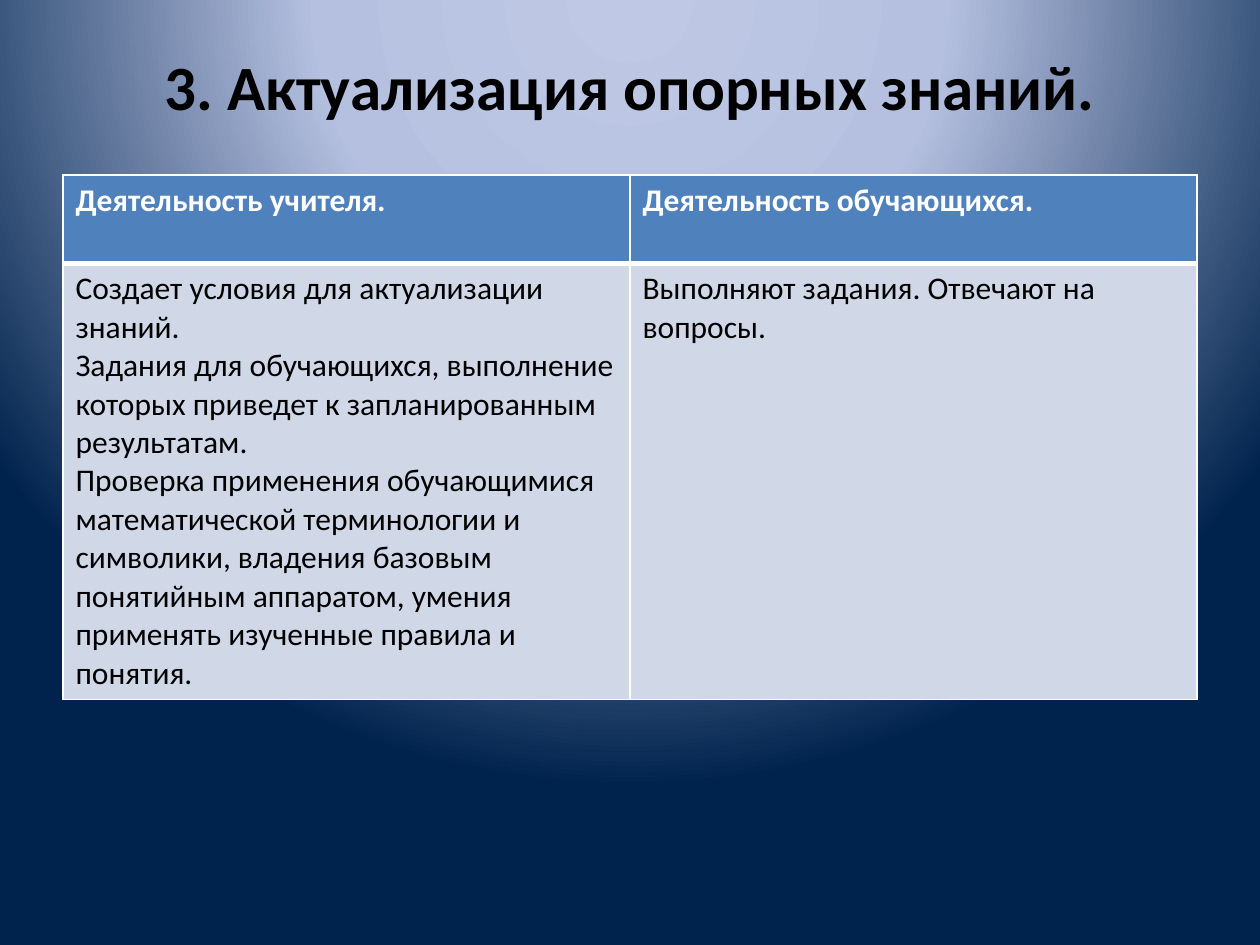
import pptx
import pptx.util
import pptx.oxml
import pptx.oxml.ns
import pptx.dml.color
import pptx.enum.text

TITLE = "3. Актуализация опорных знаний."
HEADER = ["Деятельность учителя.", "Деятельность обучающихся."]
BODY = [
    "\n".join([
        "Создает условия для актуализации знаний.",
        "Задания для обучающихся, выполнение которых приведет к "
        "запланированным результатам.",
        "Проверка применения обучающимися математической терминологии и "
        "символики, владения базовым понятийным аппаратом, умения применять "
        "изученные правила и понятия.",
    ]),
    "Выполняют задания. Отвечают на вопросы.",
]
# Texts, row height, fill, font colour, bold, bottom border width
ROWS = [
    (HEADER, 0.7, "4F81BD", "FFFFFF", True, 3),
    (BODY, 3.46, "D0D8E8", "000000", False, 1),
]
BACKGROUND = [(0, "BFC9E5"), (40, "B5C0E0"), (100, "00234D")]
WIDTH, HEIGHT, MARGIN = 10, 7.5, 0.5
TABLE_TOP = 1.39
FONT = "Calibri"
NS = pptx.oxml.ns.nsdecls("a", "p")
inch = pptx.util.Inches


def rgb(color):
    return pptx.dml.color.RGBColor.from_string(color)


def format_text(tf, size, color, bold):
    for p in tf.paragraphs:
        for r in p.runs:
            r.font.name = FONT
            r.font.size = pptx.util.Pt(size)
            r.font.bold = bold
            r.font.color.rgb = rgb(color)


def set_background(s):
    stops = "".join(
        f'<a:gs pos="{pos * 1000}"><a:srgbClr val="{color}"/></a:gs>'
        for pos, color in BACKGROUND)
    s.element.cSld.insert(0, pptx.oxml.parse_xml(
        f'<p:bg {NS}><p:bgPr><a:gradFill rotWithShape="1">'
        f'<a:gsLst>{stops}</a:gsLst><a:path path="circle">'
        '<a:fillToRect l="50000" t="-80000" r="50000" b="180000"/>'
        '</a:path></a:gradFill><a:effectLst/></p:bgPr></p:bg>'))


def set_borders(cell, bottom):
    tc_pr = cell._tc.get_or_add_tcPr()
    widths = {"L": 1, "R": 1, "T": 1, "B": bottom}
    for i, (side, width) in enumerate(widths.items()):
        tc_pr.insert(i, pptx.oxml.parse_xml(
            f'<a:ln{side} {NS} w="{pptx.util.Pt(width)}"><a:solidFill>'
            f'<a:srgbClr val="FFFFFF"/></a:solidFill></a:ln{side}>'))


prs = pptx.Presentation()
prs.slide_width, prs.slide_height = inch(WIDTH), inch(HEIGHT)
s = prs.slides.add_slide(prs.slide_layouts[5])
set_background(s)

# Title
content_width = WIDTH - 2 * MARGIN
title = s.shapes.title
title.left, title.top = inch(MARGIN), inch(0.3)
title.width, title.height = inch(content_width), inch(1.25)
tf = title.text_frame
tf.text = TITLE
tf.margin_top = inch(0.08)
tf.vertical_anchor = pptx.enum.text.MSO_ANCHOR.TOP
tf.paragraphs[0].alignment = pptx.enum.text.PP_ALIGN.CENTER
format_text(tf, 36, "000000", True)

# Table of activities
table = s.shapes.add_table(
    len(ROWS), len(HEADER), inch(MARGIN), inch(TABLE_TOP),
    inch(content_width), inch(sum(row[1] for row in ROWS))).table
for i, (texts, height, fill, color, bold, bottom) in enumerate(ROWS):
    table.rows[i].height = inch(height)
    for j, text in enumerate(texts):
        cell = table.cell(i, j)
        cell.text_frame.text = text
        format_text(cell.text_frame, 18, color, bold)
        cell.fill.solid()
        cell.fill.fore_color.rgb = rgb(fill)
        set_borders(cell, bottom)

prs.save("out.pptx")
